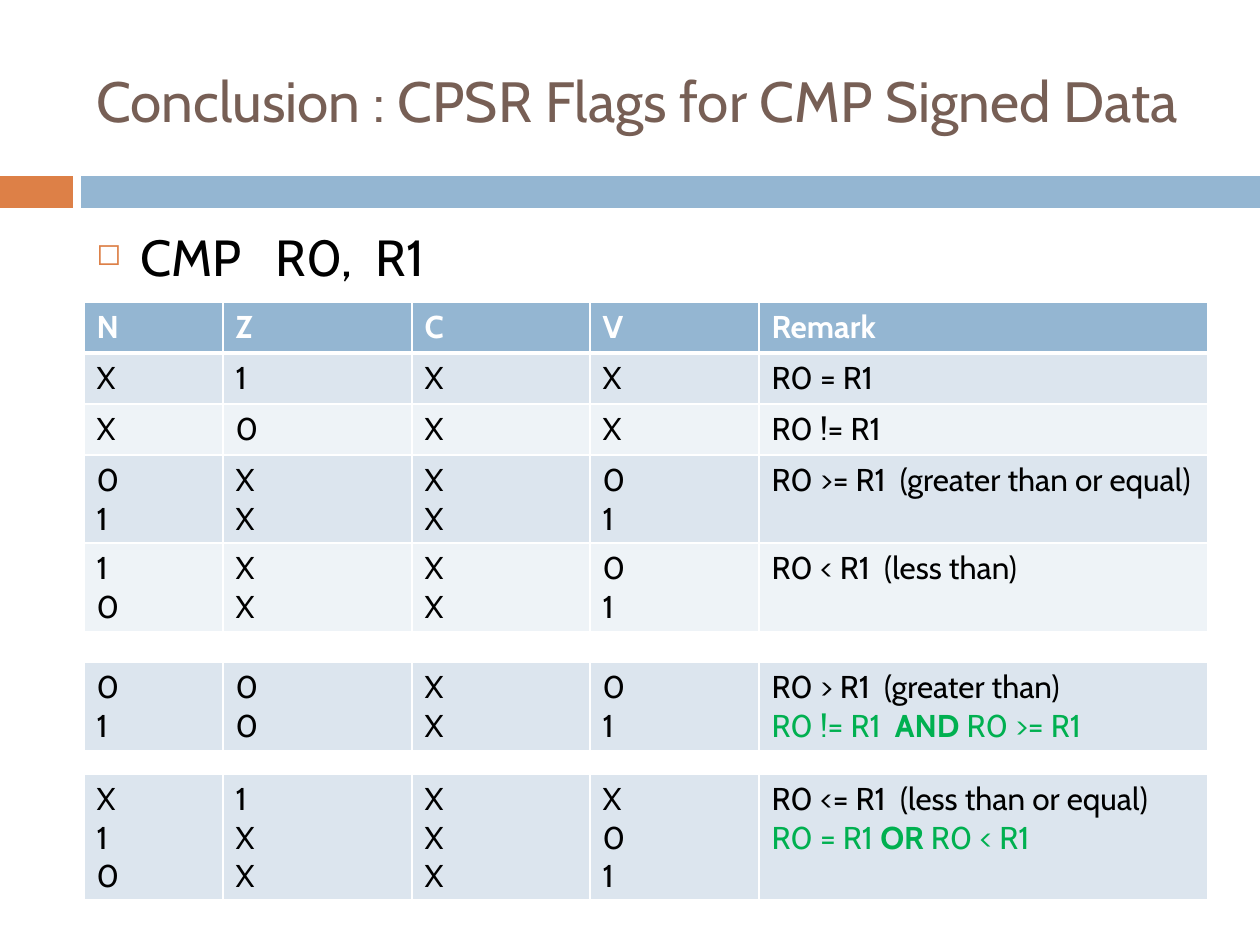
import dataclasses

import lxml.etree
import pptx
import pptx.dml.color
import pptx.enum.shapes
import pptx.enum.text
import pptx.oxml.ns
import pptx.util

SCALE = 914400 / 126
LEFT, WIDTH = 84, 1124
COLUMNS = (139, 189, 178, 169, 449)
ROW_HEIGHTS = {1: 51, 2: 88, 3: 126}


@dataclasses.dataclass(frozen=True)
class Theme:
    """Colours, font and type sizes of the slide."""
    font: str = "Cabin"
    title: str = "775F55"
    orange: str = "DD8047"
    blue: str = "94B6D2"
    band_dark: str = "DCE5EE"
    band_light: str = "EEF3F7"
    white: str = "FFFFFF"
    black: str = "000000"
    green: str = "00B050"
    title_size: float = 32.4
    body_size: float = 29
    table_size: float = 18


THEME = Theme()

HEADER = ("N", "Z", "C", "V", "Remark")
BASIC_FLAGS = (
    ("X", "1", "X", "X", "R0 = R1"),
    ("X", "0", "X", "X", "R0 != R1"),
    ("01", "XX", "XX", "01", "R0 >= R1  (greater than or equal)"),
    ("10", "XX", "XX", "01", "R0 < R1  (less than)"),
)
GREATER = ("01", "00", "XX", "01", "R0 > R1  (greater than)")
GREATER_RULE = ("R0 != R1  ", "AND", " R0 >= R1")
LESS_EQUAL = ("X10", "1XX", "XXX", "X01", "R0 <= R1  (less than or equal)")
LESS_EQUAL_RULE = ("R0 = R1 ", "OR", " R0 < R1")


def px(n):
    """Turn pixels into EMU."""
    return pptx.util.Emu(round(n * SCALE))


def rgb(value):
    """Turn a hex string into a colour."""
    return pptx.dml.color.RGBColor.from_string(value)


def add_xml(parent, tag, **attributes):
    """Append a drawing element with attributes to a parent."""
    return lxml.etree.SubElement(parent, pptx.oxml.ns.qn(tag), attributes)


def add_text(p, text, size=THEME.table_size, color=THEME.black, bold=False):
    """Add a formatted run to a paragraph."""
    r = p.add_run()
    r.text = text
    r.font.name = THEME.font
    r.font.size = pptx.util.Pt(size)
    r.font.bold = bold
    r.font.color.rgb = rgb(color)


def add_bar(s, left, width, color):
    """Add one plain piece of the divider."""
    sp = s.shapes.add_shape(pptx.enum.shapes.MSO_SHAPE.RECTANGLE,
                            px(left), px(176), px(width), px(32))
    sp.shadow.inherit = False
    sp.fill.solid()
    sp.fill.fore_color.rgb = rgb(color)
    sp.line.fill.background()


def add_box(s, top, height, anchor):
    """Add a wrapping text box and return its first paragraph."""
    tf = s.shapes.add_textbox(px(LEFT), px(top), px(WIDTH), px(height)).text_frame
    tf.word_wrap = True
    tf.vertical_anchor = anchor
    return tf.paragraphs[0]


def add_bullet(p):
    """Give a paragraph a hanging square bullet."""
    p.space_before = pptx.util.Pt(7)
    pPr = p._p.get_or_add_pPr()
    pPr.set("marL", str(px(44)))
    pPr.set("indent", str(-px(44)))
    add_xml(add_xml(pPr, "a:buClr"), "a:srgbClr", val=THEME.orange)
    add_xml(pPr, "a:buSzPct", val="60000")
    add_xml(pPr, "a:buChar", char="◻")


def format_cell(cell, fill, bottom):
    """Set the white borders and the fill of a cell."""
    tcPr = cell._tc.get_or_add_tcPr()
    for side, points in (("L", 1), ("R", 1), ("T", 1), ("B", bottom)):
        ln = add_xml(tcPr, f"a:ln{side}", w=str(pptx.util.Pt(points)))
        add_xml(add_xml(ln, "a:solidFill"), "a:srgbClr", val=THEME.white)
    cell.fill.solid()
    cell.fill.fore_color.rgb = rgb(fill)


def add_rule(cell, parts):
    """Add a green line whose middle word is bold."""
    p = cell.text_frame.add_paragraph()
    for text, bold in zip(parts, (False, True, False)):
        add_text(p, text, color=THEME.green, bold=bold)


def add_flag_table(s, top, rows, header=None):
    """Add a banded table of flags and return it."""
    heights = [ROW_HEIGHTS[len(row[0])] for row in rows]
    if header:
        rows, heights = (header, *rows), [ROW_HEIGHTS[1], *heights]
    table = s.shapes.add_table(len(rows), len(COLUMNS), px(LEFT), px(top),
                               px(WIDTH), px(sum(heights))).table
    table.first_row = table.horz_banding = False
    for column, width in zip(table.columns, COLUMNS):
        column.width = px(width)
    bands = (THEME.band_dark, THEME.band_light)
    for i, (row, height) in enumerate(zip(rows, heights)):
        table.rows[i].height = px(height)
        head = row is header
        fill = THEME.blue if head else bands[(i - bool(header)) % 2]
        for j, value in enumerate(row):
            cell = table.cell(i, j)
            format_cell(cell, fill, 3 if head else 1)
            lines = [value] if j == len(COLUMNS) - 1 else value
            for k, line in enumerate(lines):
                tf = cell.text_frame
                p = tf.add_paragraph() if k else tf.paragraphs[0]
                add_text(p, line, bold=head,
                         color=THEME.white if head else THEME.black)
    return table


def main():
    """Build and save the slide."""
    prs = pptx.Presentation()
    prs.slide_width, prs.slide_height = px(1260), px(945)
    s = prs.slides.add_slide(prs.slide_layouts[6])
    anchors = pptx.enum.text.MSO_ANCHOR
    add_bar(s, 0, 73, THEME.orange)
    add_bar(s, 81, 1179, THEME.blue)
    p = add_box(s, 32, 136, anchors.MIDDLE)
    add_text(p, "Conclusion : CPSR Flags for CMP Signed Data",
             size=THEME.title_size, color=THEME.title)
    add_flag_table(s, 302, BASIC_FLAGS, HEADER)
    p = add_box(s, 220, 620, anchors.TOP)
    add_bullet(p)
    add_text(p, "CMP   R0,  R1", size=THEME.body_size)
    for top, row, rule in ((774, LESS_EQUAL, LESS_EQUAL_RULE),
                           (662, GREATER, GREATER_RULE)):
        table = add_flag_table(s, top, [row])
        add_rule(table.cell(0, len(COLUMNS) - 1), rule)
    prs.save("out.pptx")


if __name__ == "__main__":
    main()
